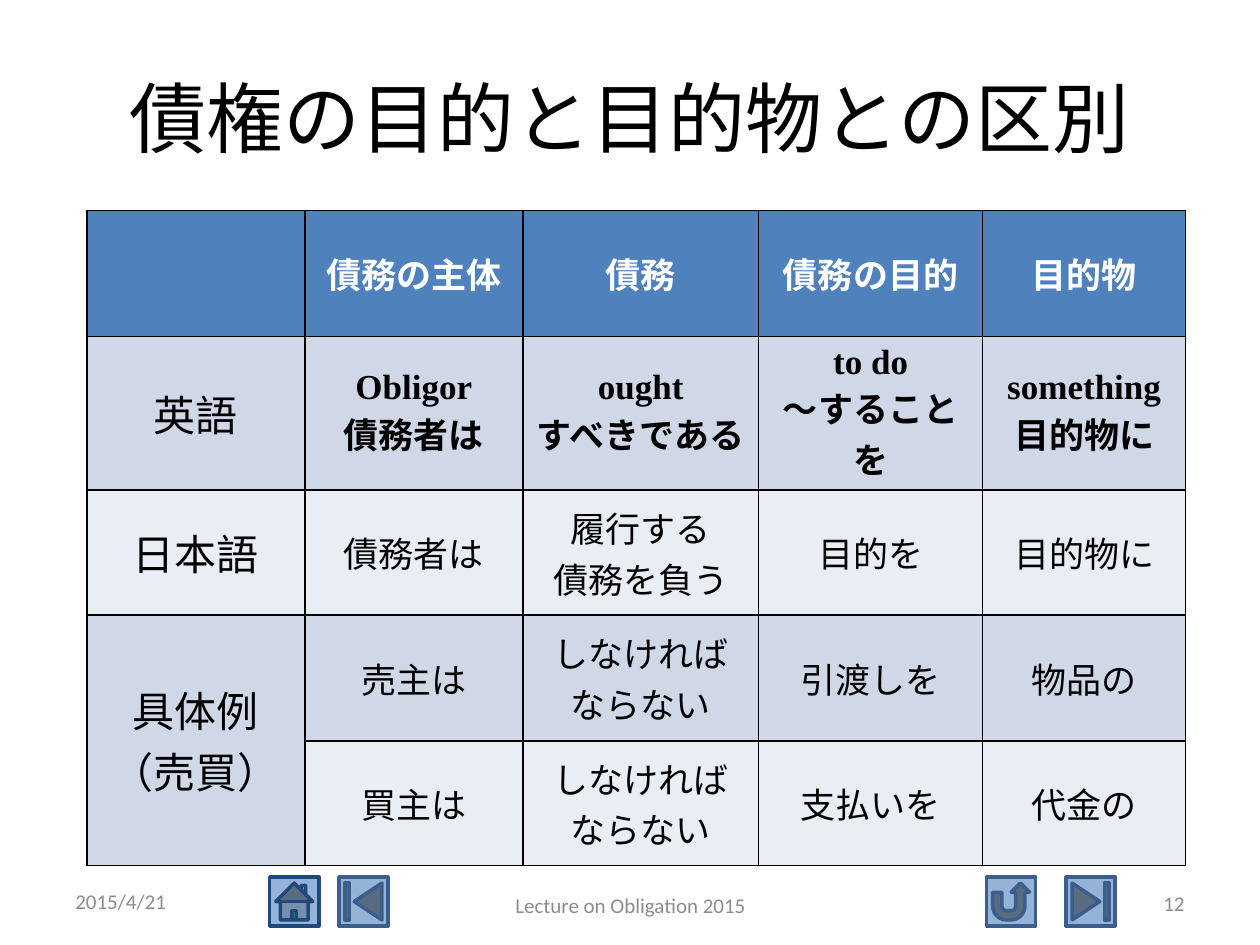
from pptx import Presentation
from pptx.dml.color import RGBColor
from pptx.enum.shapes import MSO_SHAPE as SHAPE
from pptx.enum.text import MSO_ANCHOR as ANCHOR, PP_ALIGN as ALIGN
from pptx.oxml import parse_xml
from pptx.oxml.ns import nsdecls
from pptx.util import Pt

EMU_PER_PX = 9144  # 100 px to the inch

BLACK = RGBColor(0x00, 0x00, 0x00)
WHITE = RGBColor(0xFF, 0xFF, 0xFF)
GREY = RGBColor(0x8C, 0x8C, 0x8C)
HEADER = RGBColor(0x4F, 0x81, 0xBD)
BANDS = (RGBColor(0xD0, 0xD8, 0xE8), RGBColor(0xE9, 0xED, 0xF4))
BUTTON = RGBColor(0x95, 0xB3, 0xD7)
EDGE = RGBColor(0x3A, 0x5F, 0x8C)
HOME_EDGE = RGBColor(0x1F, 0x49, 0x7D)

BUTTON_TOP, BUTTON_SIZE = 696, 39
BUTTONS = [
    (SHAPE.ACTION_BUTTON_BEGINNING, 269, EDGE),
    (SHAPE.ACTION_BUTTON_END, 846, EDGE),
    (SHAPE.ACTION_BUTTON_RETURN, 783, EDGE),
    (SHAPE.ACTION_BUTTON_HOME, 214, HOME_EDGE),
]
FOOTERS = [
    ("2015/4/21", (50, 695, 233, 40), ALIGN.LEFT),
    ("Lecture on Obligation 2015", (342, 698, 317, 40), ALIGN.CENTER),
    ("12", (717, 697, 233, 40), ALIGN.RIGHT),
]
COLUMN_WIDTHS = (173, 173, 187, 178, 161)
ROW_HEIGHTS = (100, 122, 99, 100, 99)  # the second holds three lines
ROWS = [
    ["", "債務の主体", "債務", "債務の目的", "目的物"],
    ["英語", "Obligor\n債務者は", "ought\nすべきである",
     "to do\n～することを", "something\n目的物に"],
    ["日本語", "債務者は", "履行する\n債務を負う", "目的を", "目的物に"],
    ["具体例\n（売買）", "売主は", "しなければ\nならない", "引渡しを", "物品の"],
    ["", "買主は", "しなければ\nならない", "支払いを", "代金の"],
]


def px(n):
    return n * EMU_PER_PX


def write(tf, text, size=20, color=BLACK, bold=False, font="Calibri",
          align=ALIGN.CENTER):
    """Fill the first paragraph, with a line break at each newline."""
    tf.word_wrap = True
    p = tf.paragraphs[0]
    p.alignment = align
    for i, line in enumerate(text.split("\n")):
        if i:
            p.add_line_break()
        r = p.add_run()
        r.text = line
        r.font.size = Pt(size)
        r.font.name = font
        r.font.bold = bold
        r.font.color.rgb = color


def add_borders(cell):
    tc_pr = cell._tc.get_or_add_tcPr()
    for side in "LRTB":
        tc_pr.append(parse_xml(
            f'<a:ln{side} {nsdecls("a")} w="12700"><a:solidFill>'
            f'<a:srgbClr val="{BLACK}"/></a:solidFill></a:ln{side}>'))


class Deck:
    def __init__(self, width, height):
        self.prs = Presentation()
        self.prs.slide_width, self.prs.slide_height = px(width), px(height)
        self.slide = self.prs.slides.add_slide(self.prs.slide_layouts[6])

    def text(self, text, box, **style):
        tf = self.slide.shapes.add_textbox(*map(px, box)).text_frame
        tf.vertical_anchor = ANCHOR.MIDDLE
        write(tf, text, **style)

    def button(self, kind, left, edge):
        box = (left, BUTTON_TOP, BUTTON_SIZE, BUTTON_SIZE)
        s = self.slide.shapes.add_shape(kind, *map(px, box))
        s.shadow.inherit = False
        s.fill.solid()
        s.fill.fore_color.rgb = BUTTON
        s.line.color.rgb = edge
        s.line.width = Pt(2)

    def table(self, rows, left, top):
        box = (left, top, sum(COLUMN_WIDTHS), sum(ROW_HEIGHTS))
        table = self.slide.shapes.add_table(
            len(rows), len(COLUMN_WIDTHS), *map(px, box)).table
        for column, width in zip(table.columns, COLUMN_WIDTHS):
            column.width = px(width)
        for row, height in zip(table.rows, ROW_HEIGHTS):
            row.height = px(height)
        for i, row in enumerate(rows):
            for j, text in enumerate(row):
                self.cell(table.cell(i, j), text, i, j)
        table.cell(3, 0).merge(table.cell(4, 0))

    def cell(self, cell, text, i, j):
        add_borders(cell)
        cell.fill.solid()
        cell.fill.fore_color.rgb = BANDS[(i - 1) % 2] if i else HEADER
        cell.vertical_anchor = ANCHOR.MIDDLE
        if not text:
            return
        if i == 0:
            style = dict(color=WHITE, bold=True)
        elif j == 0:
            style = dict(size=24)
        elif i == 1:
            style = dict(bold=True, font="Times New Roman")
        else:
            style = {}
        write(cell.text_frame, text, **style)


def main():
    deck = Deck(1000, 750)
    for button in BUTTONS:
        deck.button(*button)
    deck.text("債権の目的と目的物との区別", (50, 30, 900, 125), size=44)
    for text, box, align in FOOTERS:
        deck.text(text, box, size=12, color=GREY, align=align)
    deck.table(ROWS, 69, 167)
    deck.prs.save("out.pptx")


if __name__ == "__main__":
    main()
